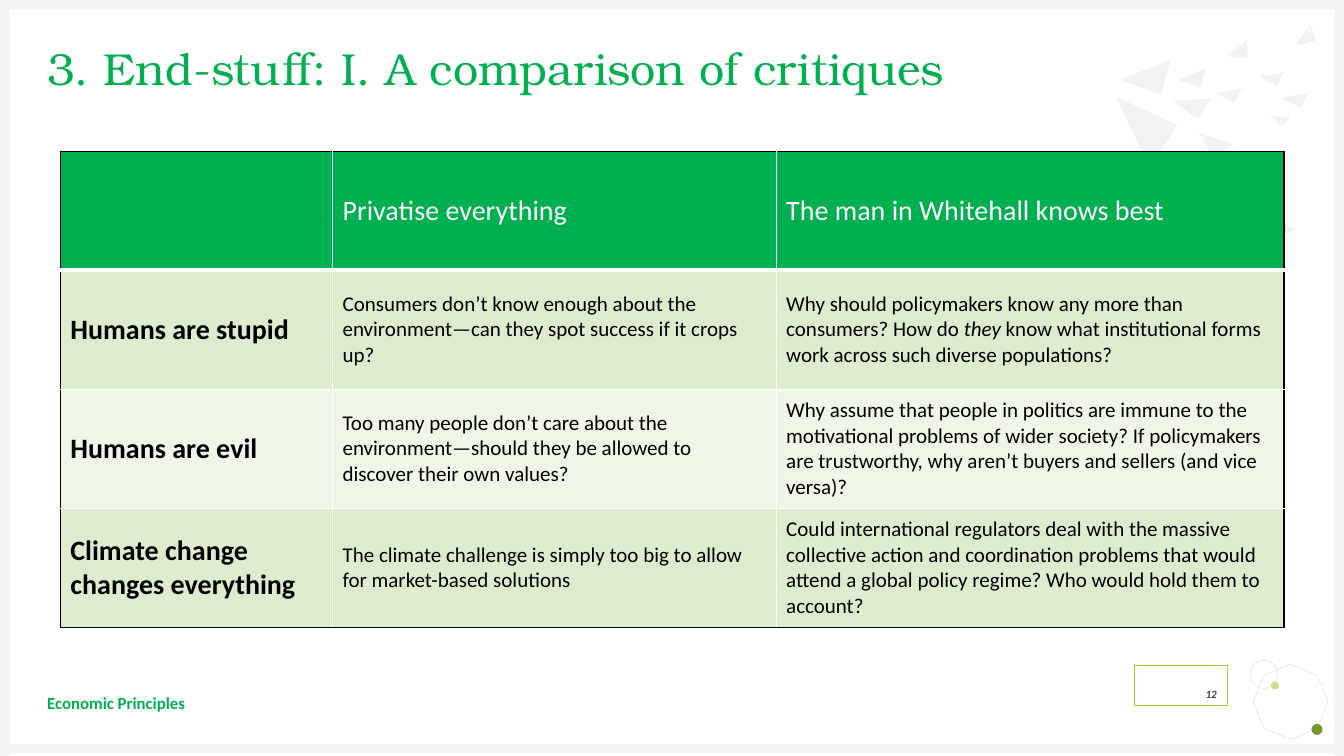
"""Build the slide that compares critiques of two environmental policies."""
from lxml import etree
from pptx import Presentation
from pptx.dml.color import RGBColor
from pptx.enum.shapes import MSO_SHAPE
from pptx.enum.text import MSO_ANCHOR, PP_ALIGN
from pptx.oxml.ns import qn
from pptx.util import Cm, Pt

RECT, OVAL, OCTAGON = MSO_SHAPE.RECTANGLE, MSO_SHAPE.OVAL, MSO_SHAPE.OCTAGON
MIDDLE, BOTTOM = MSO_ANCHOR.MIDDLE, MSO_ANCHOR.BOTTOM
LEFT, RIGHT = PP_ALIGN.LEFT, PP_ALIGN.RIGHT

GREEN = RGBColor(0x00, 0xB0, 0x50)
LIME = RGBColor(0x9A, 0xCB, 0x39)
PALE_LIME = RGBColor(0xC2, 0xE0, 0x88)
OLIVE = RGBColor(0x74, 0x9A, 0x29)
BAND_DARK = RGBColor(0xDE, 0xEC, 0xCE)
BAND_LIGHT = RGBColor(0xEF, 0xF6, 0xE8)
PALE_GREY = RGBColor(0xF2, 0xF2, 0xF2)
LINE_GREY = RGBColor(0xD9, 0xD9, 0xD9)
DARK_GREY = RGBColor(0x40, 0x40, 0x40)
WHITE = RGBColor(0xFF, 0xFF, 0xFF)
BLACK = RGBColor(0x00, 0x00, 0x00)

TITLE = {"name": "TeX Gyre Bonum", "size": Pt(32), "bold": False}
HEADER = {"name": "Calibri", "size": Pt(20), "bold": False}
CRITIQUE = {"name": "Calibri", "size": Pt(20), "bold": True}
BODY = {"name": "Calibri", "size": Pt(15), "bold": False}
FOOTER = {"name": "Calibri", "size": Pt(12), "bold": True}
NUMBER = {"name": "Calibri", "size": Pt(8), "bold": True, "italic": True}


def write(p, text, color, fmt):
    """Add text to a paragraph, with parts between asterisks in italics."""
    for i, part in enumerate(text.split("*")):
        r = p.add_run()
        r.text = part
        r.font.color.rgb = color
        for name, value in fmt.items():
            setattr(r.font, name, value)
        if i % 2:
            r.font.italic = True


def paint(sp, fill=None, line=None):
    """Set the fill and outline of a shape and drop its shadow."""
    sp.shadow.inherit = False
    if fill is None:
        sp.fill.background()
    else:
        sp.fill.solid()
        sp.fill.fore_color.rgb = fill
    if line is None:
        sp.line.fill.background()
    else:
        sp.line.color.rgb = line
        sp.line.width = Pt(0.25)


prs = Presentation()
prs.slide_width, prs.slide_height = Cm(33.87), Cm(19.05)
s = prs.slides.add_slide(prs.slide_layouts[5])

decorations = [
    (OCTAGON, 31.65, 16.81, 1.75, 1.75, None, LINE_GREY),
    (OVAL, 32.03, 17.17, 0.2, 0.2, PALE_LIME, None),
    (OVAL, 33.05, 18.24, 0.28, 0.28, OLIVE, None),
    (OVAL, 31.5, 16.64, 0.71, 0.71, None, LINE_GREY),
    (RECT, 0, 18.75, 33.87, 0.23, PALE_GREY, None),
    (RECT, 0, 0, 33.87, 0.23, PALE_GREY, None),
    (RECT, 0, 0, 0.23, 19.05, PALE_GREY, None),
    (RECT, 33.64, 0, 0.23, 19.05, PALE_GREY, None),
]
for kind, x, y, w, h, fill, line in decorations:
    sp = s.shapes.add_shape(kind, Cm(x), Cm(y), Cm(w), Cm(h))
    paint(sp, fill, line)
    if kind == OCTAGON:
        sp.rotation = 22.7

shards = [
    [(29.49, 1.52), (29.26, 2.39), (28.22, 2.01)],
    [(30.51, 2.49), (30.18, 3), (29.57, 2.54)],
    [(30.38, 1.73), (30.25, 2.21), (29.69, 2.01)],
    [(31.29, 2.21), (31.12, 2.59), (30.66, 2.36)],
    [(31.42, 1.02), (31.45, 1.45), (31.09, 1.45), (30.94, 1.4)],
    [(32.51, 2.95), (32.31, 3.2), (32.11, 3.02), (32.03, 2.92)],
    [(33.02, 0.61), (33.15, 1.02), (32.82, 1.12), (32.64, 1.12)],
    [(32.36, 1.83), (32.16, 2.18), (31.72, 1.91)],
    [(32.97, 2.34), (32.79, 2.72), (32.46, 2.57), (32.33, 2.46)],
    [(29.67, 3.15), (28.98, 4.22), (28.12, 2.44)],
    [(31.09, 3.63), (30.58, 3.99), (30.2, 3.35)],
    [(32.64, 5.79), (32.33, 5.92), (32.23, 5.66), (32.23, 5.56)],
]
for shard in shards:
    points = [(Cm(x), Cm(y)) for x, y in shard]
    builder = s.shapes.build_freeform(*points[0])
    builder.add_line_segments(points[1:], close=True)
    paint(builder.convert_to_shape(), PALE_GREY)

title = s.shapes.title
title.left, title.top, title.width, title.height = Cm(1.19), Cm(1.19), Cm(31.5), Cm(1.19)
footer = s.shapes.add_textbox(Cm(1.19), Cm(17.2), Cm(24.41), Cm(1.02))
for sp, text, fmt in [
    (title, "3. End-stuff: I. A comparison of critiques", TITLE),
    (footer, "Economic Principles", FOOTER),
]:
    tf = sp.text_frame
    tf.word_wrap = True
    tf.vertical_anchor = MIDDLE
    tf.margin_left = tf.margin_right = tf.margin_top = tf.margin_bottom = 0
    tf.paragraphs[0].alignment = LEFT
    write(tf.paragraphs[0], text, GREEN, fmt)
title.text_frame.paragraphs[0].line_spacing = 0.9

rows = [
    ["", "Privatise everything", "The man in Whitehall knows best"],
    [
        "Humans are stupid",
        "Consumers don’t know enough about the environment—can they spot success if it crops up?",
        "Why should policymakers know any more than consumers? How do *they *know what "
        "institutional forms work across such diverse populations?",
    ],
    [
        "Humans are evil",
        "Too many people don’t care about the environment—should they be allowed to discover "
        "their own values?",
        "Why assume that people in politics are immune to the motivational problems of wider "
        "society? If policymakers are trustworthy, why aren’t buyers and sellers (and vice versa)?",
    ],
    [
        "Climate change changes everything",
        "The climate challenge is simply too big to allow for market-based solutions",
        "Could international regulators deal with the massive collective action and coordination "
        "problems that would attend a global policy regime? Who would hold them to account?",
    ],
]
widths = [6.86, 11.18, 12.8]
last_row, last_col = len(rows) - 1, len(widths) - 1
table = s.shapes.add_table(
    len(rows), len(widths), Cm(1.52), Cm(3.81), Cm(sum(widths)), Cm(3 * len(rows))
).table
for column, width in zip(table.columns, widths):
    column.width = Cm(width)

for i, row in enumerate(rows):
    for j, text in enumerate(row):
        cell = table.cell(i, j)
        cell.vertical_anchor = MIDDLE
        cell.fill.solid()
        cell.fill.fore_color.rgb = GREEN if i == 0 else BAND_DARK if i % 2 else BAND_LIGHT
        if text:
            fmt = HEADER if i == 0 else CRITIQUE if j == 0 else BODY
            write(cell.text_frame.paragraphs[0], text, WHITE if i == 0 else BLACK, fmt)
        edges = [("L", j == 0), ("R", j == last_col), ("T", i == 0), ("B", i == last_row)]
        tcPr = cell._tc.get_or_add_tcPr()
        for k, (side, outer) in enumerate(edges):
            width = Pt(3) if i == 0 and side == "B" else Pt(1)
            ln = etree.Element(qn(f"a:ln{side}"), w=str(width))
            fill = etree.SubElement(ln, qn("a:solidFill"))
            etree.SubElement(fill, qn("a:srgbClr"), val=str(BLACK if outer else WHITE))
            tcPr.insert(k, ln)

sp = s.shapes.add_shape(RECT, Cm(28.58), Cm(16.76), Cm(2.34), Cm(1.02))
paint(sp, line=LIME)
sp.text_frame.vertical_anchor = BOTTOM
p = sp.text_frame.paragraphs[0]
p.alignment = RIGHT
write(p, "12", DARK_GREY, NUMBER)

prs.save("out.pptx")
